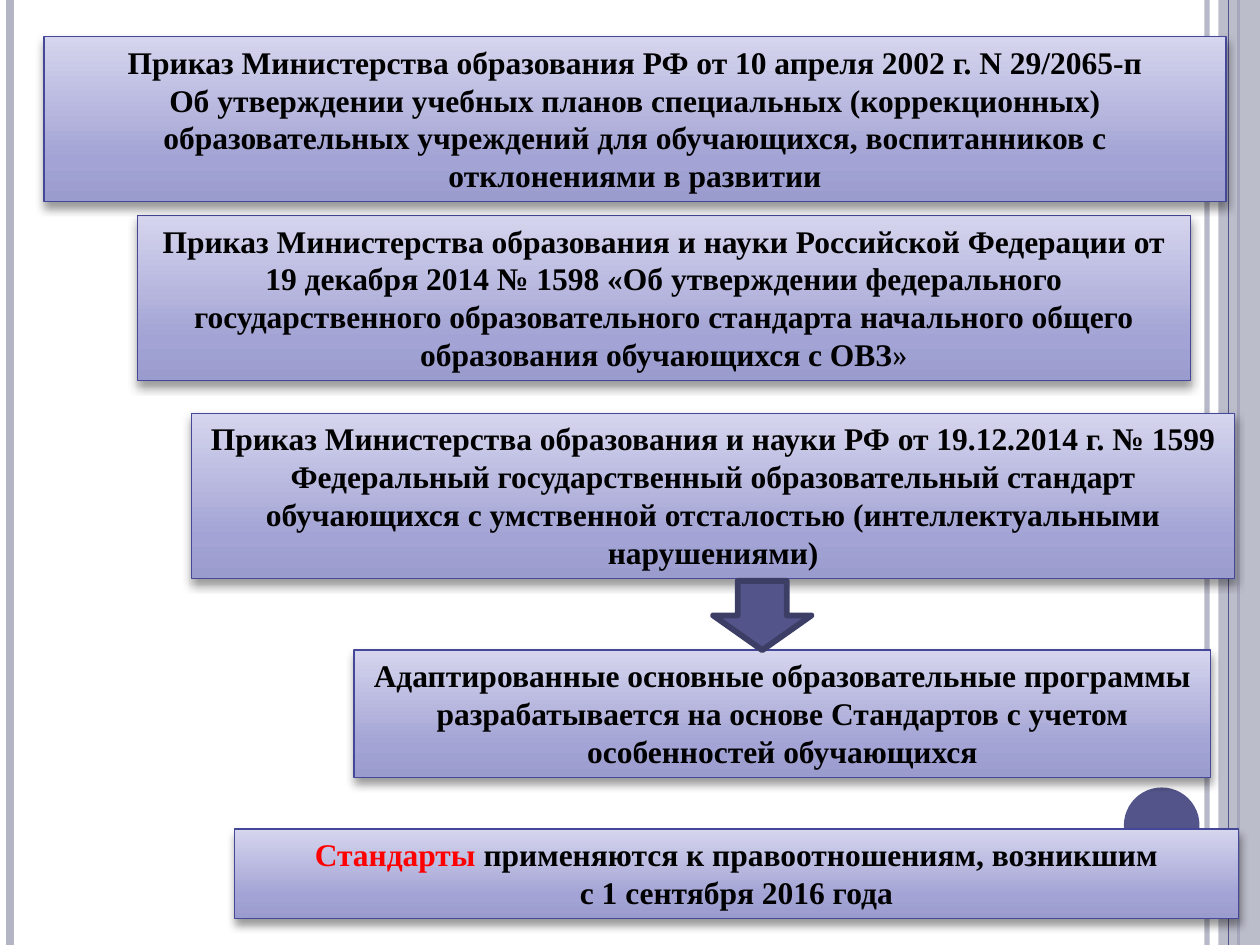
import copy
from dataclasses import dataclass

import pptx
import pptx.dml.color
import pptx.enum.dml
import pptx.enum.shapes
import pptx.enum.text
import pptx.oxml
import pptx.oxml.ns
import pptx.util
from pptx.util import Inches

SHAPE = pptx.enum.shapes.MSO_SHAPE


@dataclass(frozen=True)
class Theme:
    accent: str = "53548A"
    accent_dark: str = "3D3E66"
    band: str = "B3B4C4"
    card_line: str = "454798"
    card_stops: tuple = ((0, "9B9CCE"), (0.25, "A3A3D5"), (1, "D5D5EE"))
    text: str = "000000"
    highlight: str = "FF0000"
    font: str = "Times New Roman"
    quote_font: str = "Cambria"
    size: int = 18


THEME = Theme()

# Each card: box, then paragraphs of (text, format) runs.
CARDS = [
    ((1.09, 1.71, 8.36, 1.31), [[
        ("Приказ Министерства образования и науки Российской Федерации от "
         "19 декабря 2014 № 1598 «Об утверждении федерального государственного "
         "образовательного стандарта начального общего образования "
         "обучающихся с ОВЗ", {}),
        ("»", {"font": THEME.quote_font, "bold": False})]]),
    ((1.52, 3.28, 8.28, 1.31), [[
        ("Приказ Министерства образования и науки РФ от 19.12.2014 г. № 1599 "
         "Федеральный государственный образовательный стандарт обучающихся с "
         "умственной отсталостью (интеллектуальными нарушениями)", {})]]),
    ((1.86, 6.58, 7.97, 0.71), [
        [("Стандарты", {"color": THEME.highlight}),
         (" применяются к правоотношениям, возникшим", {})],
        [("с 1 сентября 2016 года", {})]]),
    ((2.81, 5.16, 6.8, 1.01), [[
        ("Адаптированные основные образовательные программы разрабатывается "
         "на основе Стандартов с учетом особенностей обучающихся", {})]]),
    ((0.35, 0.29, 9.38, 1.31), [
        [("Приказ Министерства образования РФ от 10 апреля 2002 г. "
          "N 29/2065-п", {})],
        [("Об утверждении учебных планов специальных (коррекционных) "
          "образовательных учреждений для обучающихся, воспитанников с "
          "отклонениями в развитии", {})]]),
]
ARROW_BOX = (5.66, 4.61, 0.78, 0.55)


def rgb(color):
    return pptx.dml.color.RGBColor.from_string(color)


def set_alpha(element, percent):
    """Make the solid colour inside the element partly transparent."""
    color = element.find(".//" + pptx.oxml.ns.qn("a:srgbClr"))
    alpha = color.makeelement(pptx.oxml.ns.qn("a:alpha"), {"val": str(percent * 1000)})
    color.append(alpha)


def add_run(paragraph, text, *, color=THEME.text, font=THEME.font,
            size=THEME.size, bold=True):
    run = paragraph.add_run()
    run.text = text
    run.font.name = font
    run.font.size = pptx.util.Pt(size)
    run.font.bold = bold
    run.font.color.rgb = rgb(color)


def add_preset(slide, preset, box, *, fill=None, line=None, width=0.75):
    shape = slide.shapes.add_shape(preset, *map(Inches, box))
    shape.shadow.inherit = False
    if fill:
        shape.fill.solid()
        shape.fill.fore_color.rgb = rgb(fill)
    if line:
        shape.line.color.rgb = rgb(line)
        shape.line.width = pptx.util.Pt(width)
    else:
        shape.line.fill.background()
    return shape


def add_stripe(slide, x, top, bottom, color, width):
    stripe = slide.shapes.add_connector(
        pptx.enum.shapes.MSO_CONNECTOR.STRAIGHT,
        Inches(x), Inches(top), Inches(x), Inches(bottom))
    stripe.line.color.rgb = rgb(color)
    stripe.line.width = pptx.util.Pt(width)
    properties = stripe._element.spPr
    properties.append(properties.makeelement(pptx.oxml.ns.qn("a:effectLst"), {}))
    return stripe


def add_margins(slide, box):
    """Draw the vertical stripes, the right band and the disc."""
    left, top, width, height = box
    right, bottom = left + width, top + height
    inner = add_stripe(slide, right - 0.42, top, bottom, THEME.band, 3)
    set_alpha(inner._element.spPr, 93)
    add_stripe(slide, left + 0.08, top, bottom, THEME.band, 4.5)
    add_stripe(slide, right - 0.17, top, bottom, THEME.accent, 1.5)
    band = add_preset(slide, SHAPE.RECTANGLE, (right - 0.33, top, 0.33, height),
                      fill=THEME.band)
    set_alpha(band._element.spPr, 87)
    add_stripe(slide, right - 0.25, top, bottom, THEME.accent, 0.75)
    add_preset(slide, SHAPE.OVAL, (right - 1.08, bottom - 1.25, 0.6, 0.6),
               fill=THEME.accent)


def fill_gradient(shape, stops):
    shape.fill.gradient()
    shape.fill.gradient_angle = 90
    stop_list = shape._element.spPr.find(".//" + pptx.oxml.ns.qn("a:gsLst"))
    stop_list.append(copy.deepcopy(stop_list[0]))
    for stop, (position, color) in zip(shape.fill.gradient_stops, stops):
        stop.position = position
        stop.color.rgb = rgb(color)


def add_shadow(shape):
    effects = shape._element.spPr.find(pptx.oxml.ns.qn("a:effectLst"))
    effects.append(pptx.oxml.parse_xml(
        f'<a:outerShdw {pptx.oxml.ns.nsdecls("a")} blurRad="{pptx.util.Pt(5.2)}" '
        f'dist="{pptx.util.Pt(3)}" dir="5400000" rotWithShape="0">'
        '<a:srgbClr val="000000"><a:alpha val="40000"/></a:srgbClr></a:outerShdw>'))


def add_card(slide, box, paragraphs):
    card = add_preset(slide, SHAPE.RECTANGLE, box, line=THEME.card_line)
    fill_gradient(card, THEME.card_stops)
    add_shadow(card)
    frame = card.text_frame
    frame.word_wrap = True
    frame.auto_size = pptx.enum.text.MSO_AUTO_SIZE.SHAPE_TO_FIT_TEXT
    frame.vertical_anchor = pptx.enum.text.MSO_ANCHOR.TOP
    for index, runs in enumerate(paragraphs):
        paragraph = frame.add_paragraph() if index else frame.paragraphs[0]
        paragraph.alignment = pptx.enum.text.PP_ALIGN.CENTER
        for text, text_format in runs:
            add_run(paragraph, text, **text_format)


def add_orders_slide(slide, box):
    left, top, _, _ = box
    add_margins(slide, box)
    *lower_cards, first_order = CARDS
    for (x, y, width, height), paragraphs in lower_cards:
        add_card(slide, (left + x, top + y, width, height), paragraphs)
    x, y, width, height = ARROW_BOX
    add_preset(slide, SHAPE.DOWN_ARROW, (left + x, top + y, width, height),
               fill=THEME.accent, line=THEME.accent_dark, width=3.35)
    (x, y, width, height), paragraphs = first_order
    add_card(slide, (left + x, top + y, width, height), paragraphs)


def main():
    deck = pptx.Presentation()
    deck.slide_width, deck.slide_height = Inches(10), Inches(7.5)
    slide = deck.slides.add_slide(deck.slide_layouts[6])
    add_orders_slide(slide, (0, 0, 10, 7.5))
    deck.save("out.pptx")


if __name__ == "__main__":
    main()
